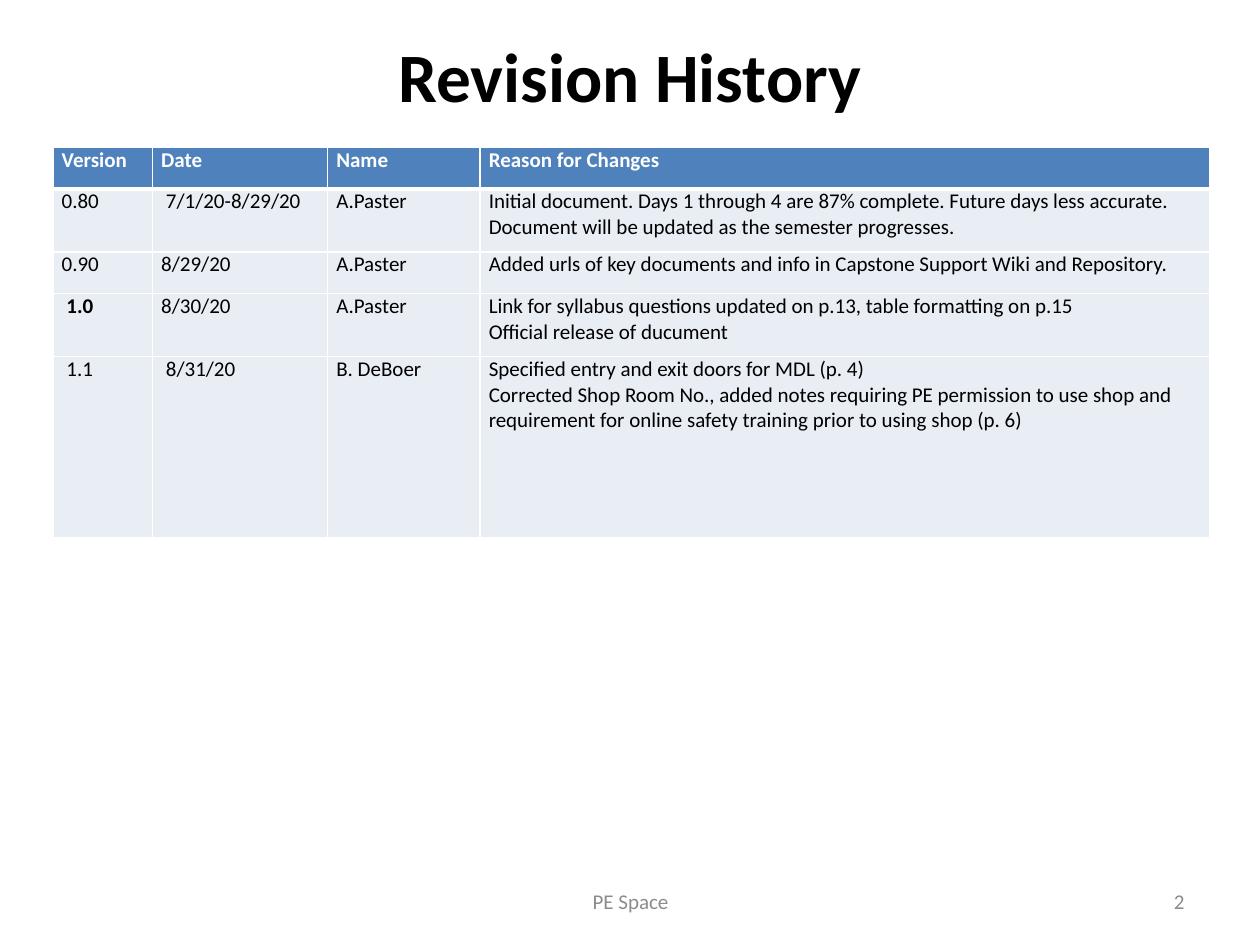
import pptx
import pptx.dml.color
import pptx.enum.text
import pptx.oxml.ns
import pptx.util
from lxml import etree

Inches = pptx.util.Inches
Pt = pptx.util.Pt
ALIGN = pptx.enum.text.PP_ALIGN
ANCHOR = pptx.enum.text.MSO_ANCHOR

COLORS = {
    "text": "000000",
    "white": "FFFFFF",
    "header": "4F81BD",
    "row": "E9EDF4",
    "footer": "8C8C8C",
}

HEADINGS = ["Version", "Date", "Name", "Reason for Changes"]
REVISIONS = [
    ["0.80", " 7/1/20-8/29/20", "A.Paster",
     "Initial document. Days 1 through 4 are 87% complete. Future days less accurate. "
     "Document will be updated as the semester progresses."],
    ["0.90", "8/29/20", "A.Paster",
     "Added urls of key documents and info in Capstone Support Wiki and Repository."],
    [" 1.0", "8/30/20 ", "A.Paster",
     "Link for syllabus questions updated on p.13, table formatting on p.15\n"
     "Official release of ducument"],
    [" 1.1", " 8/31/20", "B. DeBoer",
     "Specified entry and exit doors for MDL (p. 4)\n"
     "Corrected Shop Room No., added notes requiring PE permission to use shop and "
     "requirement for online safety training prior to using shop (p. 6)"],
]
RELEASED = " 1.0"
COLUMN_WIDTHS = [0.79, 1.39, 1.21, 5.79]
ROW_HEIGHTS = [0.33, 0.5, 0.33, 0.5, 1.44]


def rgb(name):
    return pptx.dml.color.RGBColor.from_string(COLORS[name])


def write_text(frame, text, size=12, color="text", bold=False, align=ALIGN.LEFT):
    """Fill a text frame, one paragraph for each line of text."""
    frame.word_wrap = True
    frame.text = text
    for paragraph in frame.paragraphs:
        paragraph.alignment = align
        for run in paragraph.runs:
            run.font.name = "Calibri"
            run.font.size = Pt(size)
            run.font.bold = bold
            run.font.color.rgb = rgb(color)


def add_label(slide, box, text, anchor=ANCHOR.MIDDLE, **text_format):
    frame = slide.shapes.add_textbox(*map(Inches, box)).text_frame
    write_text(frame, text, **text_format)
    frame.vertical_anchor = anchor
    return frame


def set_borders(cell, bottom_width):
    properties = cell._tc.get_or_add_tcPr()
    for side, width in (("L", 1), ("R", 1), ("T", 1), ("B", bottom_width)):
        line = etree.SubElement(properties, pptx.oxml.ns.qn(f"a:ln{side}"), w=str(Pt(width)))
        fill = etree.SubElement(line, pptx.oxml.ns.qn("a:solidFill"))
        etree.SubElement(fill, pptx.oxml.ns.qn("a:srgbClr"), val=COLORS["white"])


def add_title(slide, box):
    title = add_label(slide, box, "Revision History", anchor=ANCHOR.TOP,
                      size=39.6, bold=True, align=ALIGN.CENTER)
    title.margin_top = 0


def add_revisions(slide, box):
    history = slide.shapes.add_table(
        len(ROW_HEIGHTS), len(COLUMN_WIDTHS), *map(Inches, box)).table
    history.horz_banding = False
    for column, width in zip(history.columns, COLUMN_WIDTHS):
        column.width = Inches(width)
    for row, height in zip(history.rows, ROW_HEIGHTS):
        row.height = Inches(height)

    for row_index, entries in enumerate([HEADINGS] + REVISIONS):
        is_header = row_index == 0
        for column_index, entry in enumerate(entries):
            cell = history.cell(row_index, column_index)
            cell.margin_left = cell.margin_right = Inches(0.07)
            cell.margin_top = cell.margin_bottom = 0
            set_borders(cell, bottom_width=3 if is_header else 1)
            cell.fill.solid()
            cell.fill.fore_color.rgb = rgb("header" if is_header else "row")
            write_text(cell.text_frame, entry,
                       color="white" if is_header else "text",
                       bold=is_header or entry == RELEASED)


def add_footer(slide, box):
    left, top, width, height = box
    add_label(slide, (left + 2.92, top, 3.17, height), "PE Space",
              color="footer", align=ALIGN.CENTER)
    number_width = 2.33
    add_label(slide, (left + width - number_width, top, number_width, height), "2",
              color="footer", align=ALIGN.RIGHT)


def main():
    deck = pptx.Presentation()
    deck.slide_width = Inches(10)
    deck.slide_height = Inches(7.5)
    slide = deck.slides.add_slide(deck.slide_layouts[6])

    add_title(slide, (0.5, 0.26, 9, 1.25))
    add_revisions(slide, (0.42, 1.17, sum(COLUMN_WIDTHS), sum(ROW_HEIGHTS)))
    add_footer(slide, (0.5, 6.95, 9, 0.4))
    deck.save("out.pptx")


if __name__ == "__main__":
    main()
